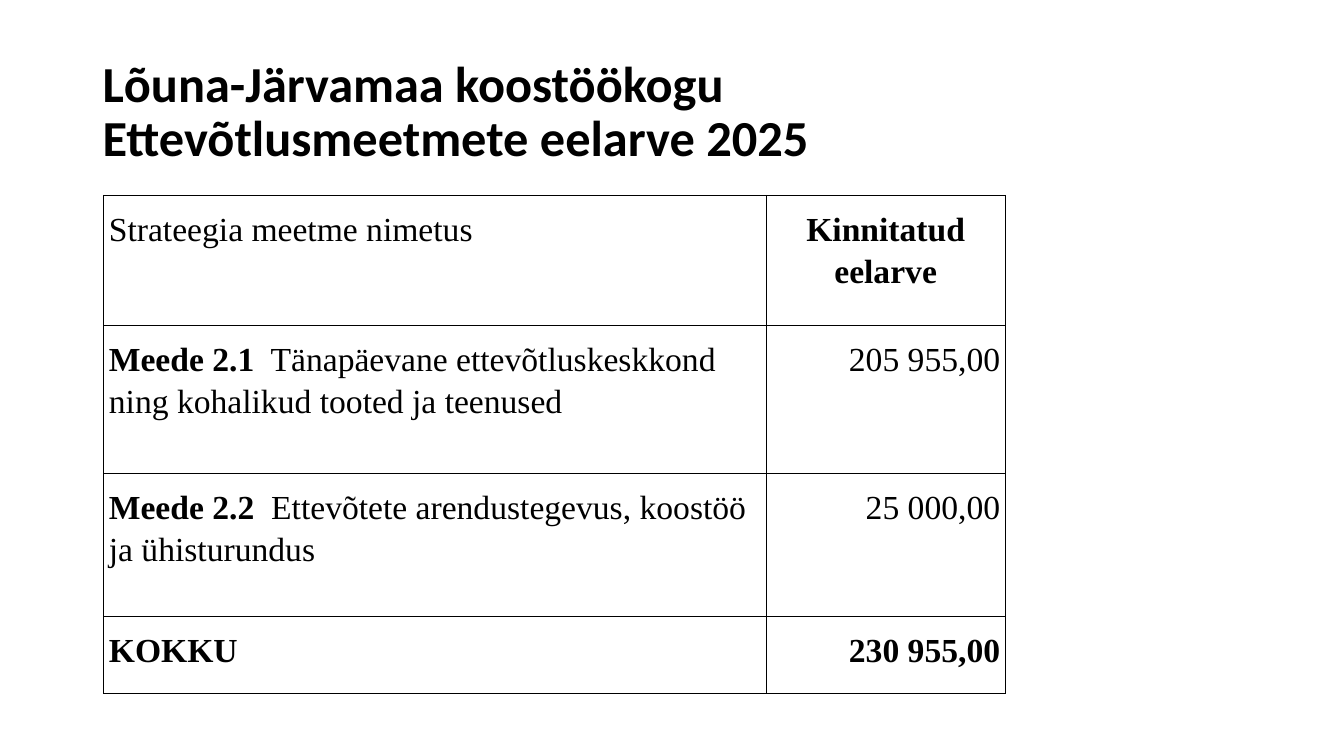
from lxml.etree import SubElement
from pptx import Presentation
from pptx.dml.color import RGBColor
from pptx.enum.text import MSO_ANCHOR, PP_ALIGN
from pptx.oxml.ns import qn
from pptx.util import Inches, Pt

BLACK = RGBColor(0, 0, 0)
COLUMN_WIDTHS = [6.57, 2.37]
ROW_HEIGHTS = [1.29, 1.47, 1.42, 0.76]
BUDGET_ROWS = [
    ("", "Strateegia meetme nimetus", "Kinnitatud eelarve"),
    ("Meede 2.1", "  Tänapäevane ettevõtluskeskkond ning kohalikud tooted ja teenused", "205 955,00"),
    ("Meede 2.2", "  Ettevõtete arendustegevus, koostöö ja ühisturundus", "25 000,00"),
    ("KOKKU", "", "230 955,00"),
]


def add_borders(cell):
    properties = cell._tc.get_or_add_tcPr()
    for position, side in enumerate(("a:lnL", "a:lnR", "a:lnT", "a:lnB")):
        line = properties.makeelement(qn(side), {"w": str(Pt(1))})
        properties.insert(position, line)
        fill = SubElement(line, qn("a:solidFill"))
        SubElement(fill, qn("a:srgbClr"), val=str(BLACK))


def style_paragraph(paragraph, name, size, spacing):
    paragraph.line_spacing = spacing
    paragraph.font.name = name
    paragraph.font.size = Pt(size)
    paragraph.font.color.rgb = BLACK


presentation = Presentation()
presentation.slide_width = Inches(13.33)
presentation.slide_height = Inches(7.5)
slide = presentation.slides.add_slide(presentation.slide_layouts[6])

title = slide.shapes.add_textbox(Inches(0.92), Inches(0.4), Inches(11.5), Inches(1.45))
title_frame = title.text_frame
title_frame.word_wrap = True
title_frame.vertical_anchor = MSO_ANCHOR.MIDDLE
title_frame.text = "Lõuna-Järvamaa koostöökogu\nEttevõtlusmeetmete eelarve 2025"
for paragraph in title_frame.paragraphs:
    style_paragraph(paragraph, "Calibri", 36, 0.9)
    paragraph.font.bold = True

table = slide.shapes.add_table(
    len(ROW_HEIGHTS), len(COLUMN_WIDTHS), Inches(1.03), Inches(1.94),
    Inches(sum(COLUMN_WIDTHS)), Inches(sum(ROW_HEIGHTS)),
).table
table.first_row = False
table.horz_banding = False
for column, width in zip(table.columns, COLUMN_WIDTHS):
    column.width = Inches(width)
for row, height in zip(table.rows, ROW_HEIGHTS):
    row.height = Inches(height)

for row_index, (measure, description, amount) in enumerate(BUDGET_ROWS):
    is_header = row_index == 0
    is_total = row_index == len(BUDGET_ROWS) - 1
    amount_alignment = PP_ALIGN.CENTER if is_header else PP_ALIGN.RIGHT
    contents = [
        ([(measure, True), (description, False)], PP_ALIGN.LEFT),
        ([(amount, is_header or is_total)], amount_alignment),
    ]
    for column_index, (runs, alignment) in enumerate(contents):
        cell = table.cell(row_index, column_index)
        cell.margin_left = cell.margin_right = Inches(0.05)
        cell.margin_top = cell.margin_bottom = Inches(0.1)
        cell.fill.background()
        add_borders(cell)
        paragraph = cell.text_frame.paragraphs[0]
        paragraph.alignment = alignment
        style_paragraph(paragraph, "Times New Roman", 24, 1.15)
        for text, bold in runs:
            if text:
                run = paragraph.add_run()
                run.text = text
                run.font.bold = bold

presentation.save("out.pptx")
